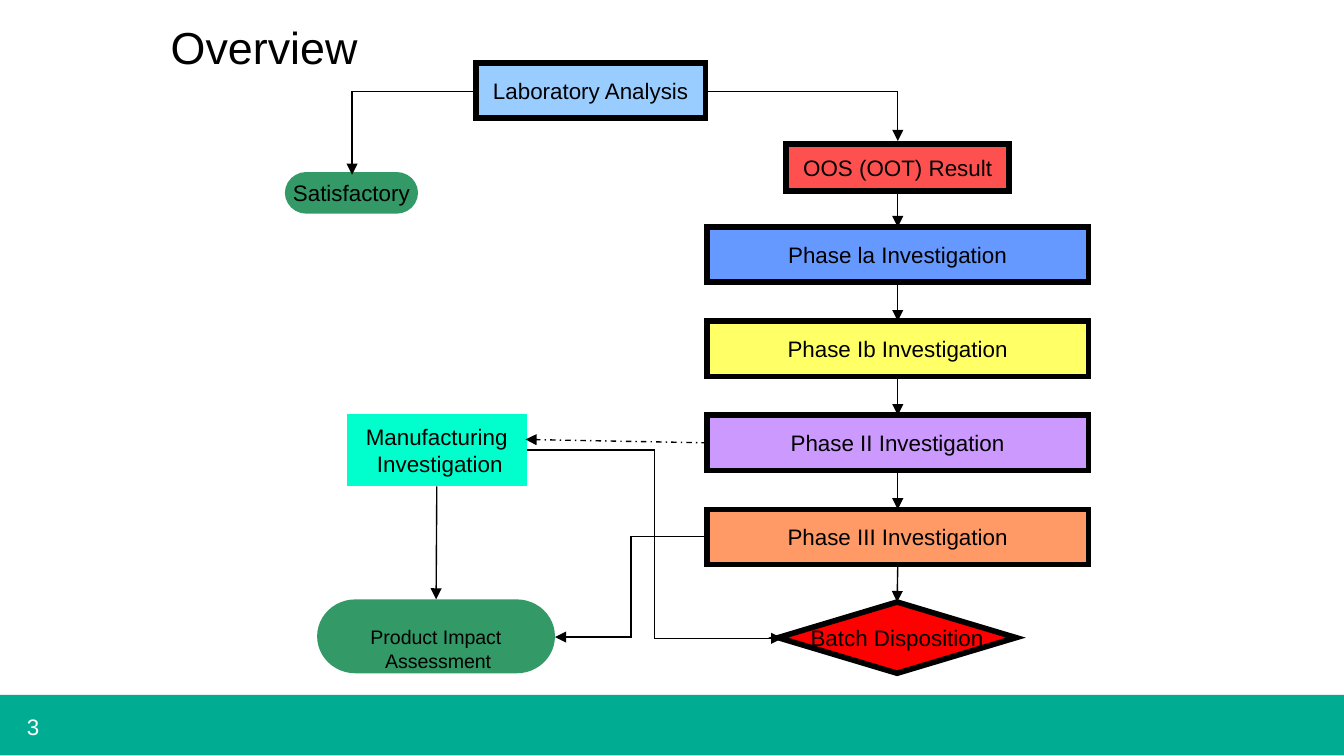
import pptx
import pptx.dml.color
import pptx.enum.dml
import pptx.enum.shapes
import pptx.enum.text
import pptx.oxml
import pptx.oxml.ns
import pptx.util

Inches = pptx.util.Inches
Pt = pptx.util.Pt
Shape = pptx.enum.shapes.MSO_SHAPE
Connector = pptx.enum.shapes.MSO_CONNECTOR
Anchor = pptx.enum.text.MSO_ANCHOR
Align = pptx.enum.text.PP_ALIGN
TOP, LEFT, BOTTOM = 0, 1, 2

PHASES = [
    ("Phase la Investigation", "6699FF"),
    ("Phase Ib Investigation", "FFFF66"),
    ("Phase II Investigation", "CC99FF"),
    ("Phase III Investigation", "FF9966"),
]


def color(value):
    return pptx.dml.color.RGBColor.from_string(value)


def drawing_element(tag, attributes=""):
    return pptx.oxml.parse_xml(
        f'<a:{tag} {pptx.oxml.ns.nsdecls("a")} {attributes}/>')


def write_text(shape, text, size, font_color="000000", alignment=Align.CENTER):
    shape.text_frame.text = text
    for paragraph in shape.text_frame.paragraphs:
        paragraph.alignment = alignment
        for run in paragraph.runs:
            run.font.name = "Arial"
            run.font.size = Pt(size)
            run.font.color.rgb = color(font_color)


def set_margins(text_frame, left=0, top=0):
    text_frame.margin_left = Inches(left)
    text_frame.margin_top = Inches(top)
    text_frame.margin_right = text_frame.margin_bottom = 0


def draw_line(line, width):
    line.color.rgb = color("000000")
    line.width = Pt(width)
    line_element = line._get_or_add_ln()
    line_element.append(drawing_element("miter", 'lim="800000"'))
    return line_element


def add_box(slide, kind, bounds, fill, text="", size=12, outlined=False):
    shape = slide.shapes.add_shape(kind, *map(Inches, bounds))
    shape.shadow.inherit = False
    shape.fill.solid()
    shape.fill.fore_color.rgb = color(fill)
    if outlined:
        draw_line(shape.line, 3)
    else:
        shape.line.fill.background()
    if text:
        shape.text_frame.vertical_anchor = Anchor.MIDDLE
        shape.text_frame.word_wrap = False
        write_text(shape, text, size)
    return shape


def add_arrow(slide, start, end, kind=Connector.STRAIGHT):
    arrow = slide.shapes.add_connector(kind, *map(Inches, start + end))
    draw_line(arrow.line, 0.75).append(drawing_element("tailEnd", 'type="triangle"'))
    arrow._element.spPr.append(drawing_element("effectLst"))
    return arrow


def add_corner_arrow(slide, start, end):
    arrow = add_arrow(slide, start, end, Connector.ELBOW)
    geometry = arrow._element.spPr.find(pptx.oxml.ns.qn("a:prstGeom"))
    geometry.set("prst", "bentConnector2")


def join_down(slide, upper, lower):
    arrow = add_arrow(slide, (0, 0), (0, 0))
    arrow.begin_connect(upper, BOTTOM)
    arrow.end_connect(lower, TOP)


def add_title(slide):
    title = slide.shapes.title
    title.left, title.top = Inches(1.27), Inches(0.15)
    title.width, title.height = Inches(7.95), Inches(0.61)
    set_margins(title.text_frame)
    title.text_frame.vertical_anchor = Anchor.TOP
    write_text(title, "Overview", 24, alignment=Align.LEFT)


def add_footer(slide):
    add_box(slide, Shape.RECTANGLE, (0, 5.17, 10, 0.45), "00AD93")
    number = slide.shapes.add_textbox(0, Inches(5.18), Inches(0.59), Inches(0.45))
    set_margins(number.text_frame, left=0.2)
    number.text_frame.word_wrap = True
    number.text_frame.vertical_anchor = Anchor.MIDDLE
    write_text(number, "3", 12, "FFFFFF", Align.LEFT)


def add_flowchart(slide):
    process, terminator = Shape.FLOWCHART_PROCESS, Shape.FLOWCHART_TERMINATOR
    add_box(slide, process, (3.54, 0.47, 1.71, 0.41), "99CCFF",
            "Laboratory Analysis", outlined=True)
    add_box(slide, terminator, (2.12, 1.28, 0.99, 0.31), "339966", "Satisfactory")
    result = add_box(slide, process, (5.85, 1.07, 1.66, 0.35), "FF5050",
                     "OOS (OOT) Result", outlined=True)
    phases = [
        add_box(slide, process, (5.26, 1.69 + 0.7 * row, 2.84, 0.41), fill,
                text, outlined=True)
        for row, (text, fill) in enumerate(PHASES)
    ]
    disposition = add_box(slide, Shape.FLOWCHART_DECISION, (5.79, 4.48, 1.77, 0.53),
                          "FF0000", "Batch Disposition", outlined=True)
    manufacturing = add_box(slide, process, (2.58, 3.08, 1.34, 0.54), "00FFCC",
                            "Manufacturing\n Investigation")
    impact = add_box(slide, terminator, (2.36, 4.46, 1.77, 0.55), "339966",
                     "Product Impact\n Assessment", size=10.5)
    impact.text_frame.vertical_anchor = Anchor.TOP
    set_margins(impact.text_frame, top=0.11)

    chain = [result, *phases, disposition]
    for upper, lower in zip(chain, chain[1:]):
        join_down(slide, upper, lower)
    join_down(slide, manufacturing, impact)
    request = add_arrow(slide, (5.26, 3.3), (3.91, 3.27))
    request.begin_connect(phases[2], LEFT)
    request.line.dash_style = pptx.enum.dml.MSO_LINE.DASH_DOT

    add_corner_arrow(slide, (3.52, 0.68), (2.62, 1.3))
    add_corner_arrow(slide, (5.27, 0.68), (6.68, 1.05))
    add_arrow(slide, (5.26, 3.99), (4.13, 4.74), Connector.ELBOW)
    add_arrow(slide, (3.92, 3.35), (5.82, 4.75), Connector.ELBOW)


def main():
    presentation = pptx.Presentation()
    presentation.slide_width = Inches(10)
    presentation.slide_height = Inches(10) * 9 // 16
    slide = presentation.slides.add_slide(presentation.slide_layouts[5])
    add_footer(slide)
    add_flowchart(slide)
    add_title(slide)
    presentation.save("out.pptx")


if __name__ == "__main__":
    main()
